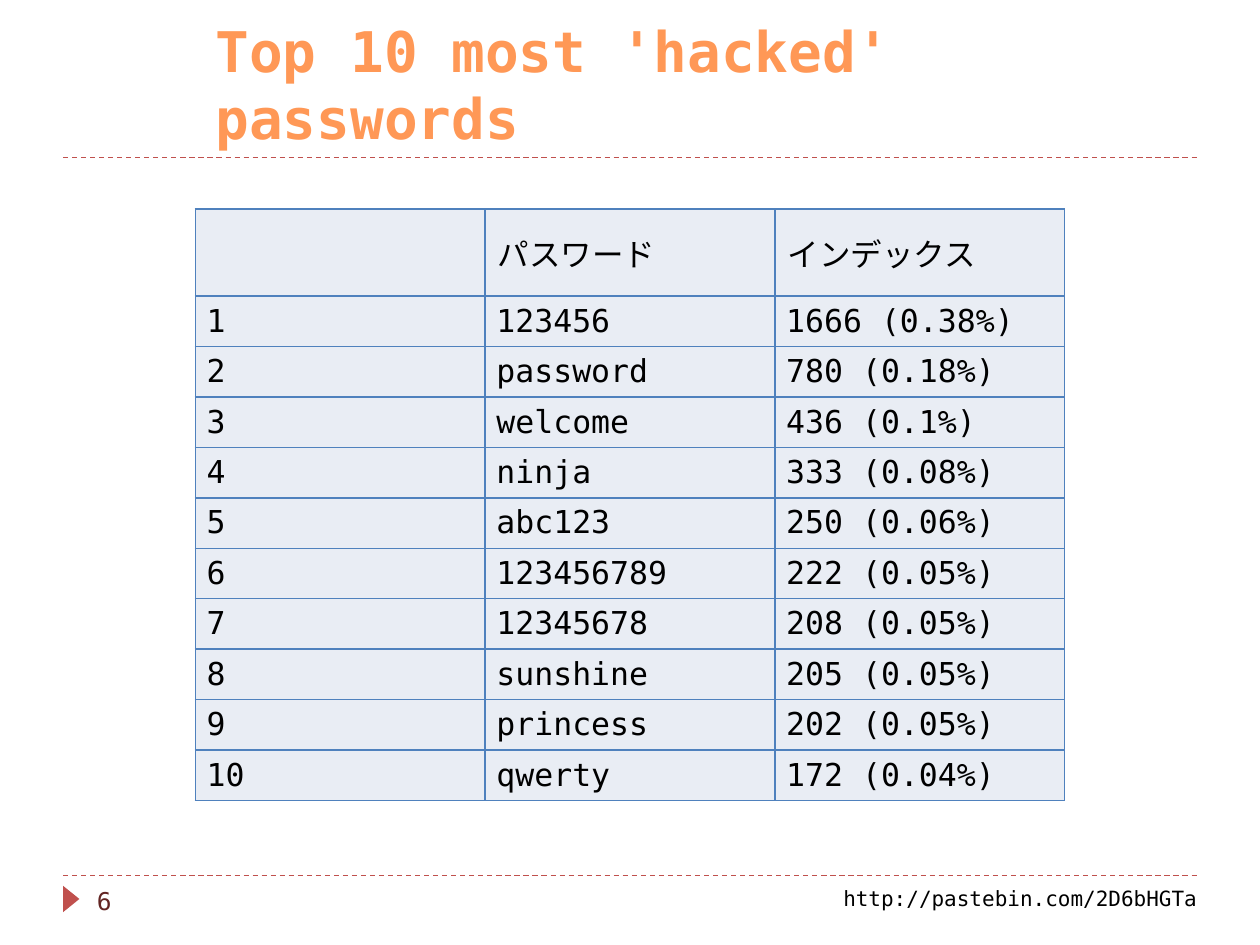
from typing import NamedTuple

from lxml.etree import SubElement
from pptx import Presentation
from pptx.dml.color import RGBColor
from pptx.enum.dml import MSO_LINE
from pptx.enum.shapes import MSO_CONNECTOR, MSO_SHAPE
from pptx.enum.text import MSO_ANCHOR, MSO_AUTO_SIZE, PP_ALIGN
from pptx.oxml.ns import qn
from pptx.util import Inches, Pt

FONT = "DejaVu Sans Mono"
RED = "C0504D"
BLACK = "000000"
BORDER = "4F81BD"
CELL_FILL = "E9EDF4"


class Entry(NamedTuple):
    rank: str
    password: str
    index: str


HEADER = Entry("", "パスワード", "インデックス")
PASSWORDS = [
    ("123456", "1666 (0.38%)"),
    ("password", "780 (0.18%)"),
    ("welcome", "436 (0.1%)"),
    ("ninja", "333 (0.08%)"),
    ("abc123", "250 (0.06%)"),
    ("123456789", "222 (0.05%)"),
    ("12345678", "208 (0.05%)"),
    ("sunshine", "205 (0.05%)"),
    ("princess", "202 (0.05%)"),
    ("qwerty", "172 (0.04%)"),
]
ENTRIES = [HEADER] + [Entry(str(n), *row) for n, row in enumerate(PASSWORDS, 1)]


def rgb(value: str) -> RGBColor:
    return RGBColor.from_string(value)


def write(tf, text: str, size: int, color: str, align=PP_ALIGN.LEFT, bold=False) -> None:
    tf.text = text
    p = tf.paragraphs[0]
    p.alignment = align
    for font in [p.font] + [r.font for r in p.runs]:
        font.name, font.size, font.bold = FONT, Pt(size), bold
        font.color.rgb = rgb(color)


def add_title(s, text: str) -> None:
    sp = s.shapes.title
    sp.left, sp.top = Inches(1.61), Inches(0.17)
    sp.width, sp.height = Inches(7.89), Inches(1.08)
    tf = sp.text_frame
    tf.word_wrap, tf.auto_size = True, MSO_AUTO_SIZE.NONE
    tf.vertical_anchor = MSO_ANCHOR.BOTTOM
    write(tf, text, 32, "FF9856", bold=True)


def add_rule(s, y: float) -> None:
    line = s.shapes.add_connector(
        MSO_CONNECTOR.STRAIGHT, Inches(0.5), Inches(y), Inches(9.5), Inches(y))
    line.line.color.rgb = rgb(RED)
    line.line.width = Pt(0.75)
    line.line.dash_style = MSO_LINE.DASH
    SubElement(line._element.spPr, qn("a:effectLst"))


def add_marker(s) -> None:
    sp = s.shapes.add_shape(MSO_SHAPE.ISOSCELES_TRIANGLE,
                            Inches(0.46), Inches(7.07), Inches(0.21), Inches(0.13))
    sp.rotation = 90
    sp.shadow.inherit = False
    sp.fill.solid()
    sp.fill.fore_color.rgb = rgb(RED)
    sp.line.fill.background()


def add_text(s, box: tuple, text: str, size: int, color: str, align, anchor) -> None:
    tf = s.shapes.add_textbox(*map(Inches, box)).text_frame
    tf.word_wrap = True
    tf.vertical_anchor = anchor
    write(tf, text, size, color, align)


def add_borders(cell) -> None:
    tc_pr = cell._tc.get_or_add_tcPr()
    for side in ("lnL", "lnR", "lnT", "lnB"):
        ln = SubElement(tc_pr, qn(f"a:{side}"), w=str(Pt(1)))
        fill = SubElement(ln, qn("a:solidFill"))
        SubElement(fill, qn("a:srgbClr"), val=BORDER)


def add_password_table(s) -> None:
    header_height, height = Inches(0.69), Inches(4.63)
    table = s.shapes.add_table(len(ENTRIES), 3, Inches(1.55), Inches(1.66),
                               Inches(6.9), height).table
    table.first_row = table.horz_banding = False
    for i, entry in enumerate(ENTRIES):
        table.rows[i].height = (height - header_height) // len(PASSWORDS) if i else header_height
        for j, text in enumerate(entry):
            cell = table.cell(i, j)
            cell.margin_left = cell.margin_right = Inches(0.09 if i else 0.1)
            cell.margin_top = cell.margin_bottom = Inches(0.05)
            cell.vertical_anchor = MSO_ANCHOR.MIDDLE
            add_borders(cell)
            cell.fill.solid()
            cell.fill.fore_color.rgb = rgb(CELL_FILL)
            write(cell.text_frame, text, 18, BLACK)


def main() -> None:
    """Build the slide of the ten most hacked passwords."""
    prs = Presentation()
    prs.slide_width, prs.slide_height = Inches(10), Inches(7.5)
    s = prs.slides.add_slide(prs.slide_layouts[5])
    for y in (6.95, 1.25):
        add_rule(s, y)
    add_marker(s)
    add_title(s, "Top 10 most 'hacked' passwords")
    add_text(s, (0.67, 6.95, 2.17, 0.4), "6", 14, "632523",
             PP_ALIGN.LEFT, MSO_ANCHOR.MIDDLE)
    add_password_table(s)
    add_text(s, (1.61, 6.98, 7.99, 0.3), "http://pastebin.com/2D6bHGTa", 12, BLACK,
             PP_ALIGN.RIGHT, MSO_ANCHOR.TOP)
    prs.save("out.pptx")


if __name__ == "__main__":
    main()
